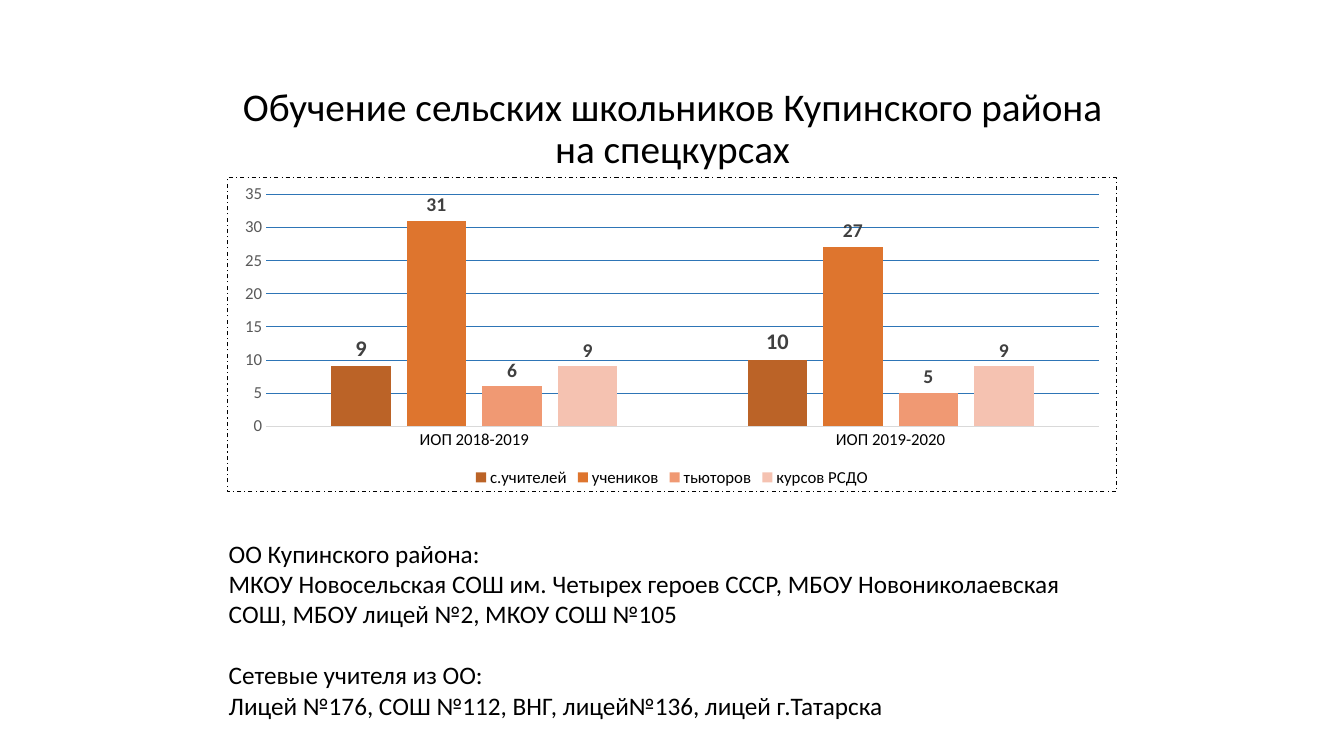
from lxml import etree
from pptx import Presentation
from pptx.chart.data import CategoryChartData as ChartData
from pptx.dml.color import RGBColor as Rgb
from pptx.enum.chart import XL_CHART_TYPE as Kind, XL_LABEL_POSITION as Spot
from pptx.enum.chart import XL_LEGEND_POSITION as Side, XL_TICK_MARK as Tick
from pptx.enum.text import MSO_ANCHOR as Anchor, PP_ALIGN as Align
from pptx.oxml import parse_xml
from pptx.util import Inches, Pt

TITLE = "Обучение сельских школьников Купинского района\vна спецкурсах"
YEARS = ["ИОП 2018-2019", "ИОП 2019-2020"]
# name, values, colour, label size
SERIES = [
    ("с.учителей", (9, 10), "BB6327", 16),
    ("учеников", (31, 27), "DE752E", 14),
    ("тьюторов", (6, 5), "F09973", 14),
    ("курсов РСДО", (9, 9), "F5C2B1", 14),
]
GROUPS = [
    ("ОО Купинского района:",
     "МКОУ Новосельская СОШ им. Четырех героев СССР, МБОУ Новониколаевская "
     "СОШ, МБОУ лицей №2, МКОУ СОШ №105"),
    ("Сетевые учителя из ОО:",
     "Лицей №176, СОШ №112, ВНГ, лицей№136, лицей г.Татарска"),
]


class Theme:
    font = "Calibri"
    black, grey, label = "000000", "595959", "404040"
    grid, axis = "2E75B6", "D9D9D9"
    title, body, base, small = 28, 18, 10, 12


def style(font, size, color=Theme.black, bold=False):
    font.name, font.size, font.bold = Theme.font, Pt(size), bold
    font.color.rgb = Rgb.from_string(color)


def box(left, top, width, height):
    return [Inches(n) for n in (left, top, width, height)]


def add_title(slide):
    title = slide.shapes.title
    title.left, title.top, title.width, title.height = box(2.17, 0.69, 9, 1.07)
    frame = title.text_frame
    frame.text = TITLE
    frame.word_wrap = True
    frame.vertical_anchor = Anchor.BOTTOM
    para = frame.paragraphs[0]
    para.alignment, para.line_spacing = Align.CENTER, 0.9
    for run in para.runs:
        style(run.font, Theme.title)


def add_border(chart):
    """Put a dash-dot frame around the whole chart."""
    line = parse_xml(
        '<c:spPr xmlns:c="http://schemas.openxmlformats.org/drawingml/2006/chart" '
        'xmlns:a="http://schemas.openxmlformats.org/drawingml/2006/main">'
        f'<a:noFill/><a:ln w="{Pt(0.75)}"><a:solidFill><a:srgbClr val="{Theme.black}"/>'
        '</a:solidFill><a:prstDash val="dashDot"/></a:ln></c:spPr>')
    root = chart.element
    root.find(etree.QName(root.nsmap["c"], "chart").text).addnext(line)


def add_bars(slide):
    data = ChartData()
    data.categories = YEARS
    for name, values, *_ in SERIES:
        data.add_series(name, values)
    chart = slide.shapes.add_chart(
        Kind.COLUMN_CLUSTERED, *box(2.25, 1.76, 8.83, 3.12), data).chart
    style(chart.font, Theme.base)
    chart.has_title = False
    chart.has_legend = True
    chart.legend.position = Side.BOTTOM
    chart.legend.include_in_layout = False
    style(chart.legend.font, Theme.small)
    add_border(chart)

    cats, vals = chart.category_axis, chart.value_axis
    for axis, color in ((cats, Theme.black), (vals, Theme.grey)):
        axis.major_tick_mark = axis.minor_tick_mark = Tick.NONE
        style(axis.tick_labels.font, Theme.small, color)
    cats.format.line.color.rgb = Rgb.from_string(Theme.axis)
    cats.format.line.width = Pt(0.75)
    vals.format.line.fill.background()
    vals.minimum_scale, vals.maximum_scale, vals.major_unit = 0, 35, 5
    grid = vals.major_gridlines.format.line
    grid.color.rgb, grid.width = Rgb.from_string(Theme.grid), Pt(0.25)

    plot = chart.plots[0]
    plot.gap_width, plot.overlap, plot.vary_by_categories = 219, -27, False
    for bars, (_, _, color, size) in zip(plot.series, SERIES):
        bars.format.fill.solid()
        bars.format.fill.fore_color.rgb = Rgb.from_string(color)
        labels = bars.data_labels
        labels.show_value, labels.position = True, Spot.OUTSIDE_END
        style(labels.font, size, Theme.label, True)


def add_schools(slide):
    frame = slide.shapes.add_textbox(*box(2.17, 5.29, 8.92, 2.2)).text_frame
    frame.word_wrap = True
    frame.text = "\n".join(line for group in GROUPS for line in group)
    for para in frame.paragraphs:
        style(para.runs[0].font, Theme.body)
    # one empty line's height between the two groups
    frame.paragraphs[len(GROUPS[0])].space_before = Pt(22)


def main():
    deck = Presentation()
    deck.slide_width, deck.slide_height = Inches(13.33), Inches(7.5)
    slide = deck.slides.add_slide(deck.slide_layouts[5])
    add_title(slide)
    add_bars(slide)
    add_schools(slide)
    deck.save("out.pptx")


if __name__ == "__main__":
    main()
